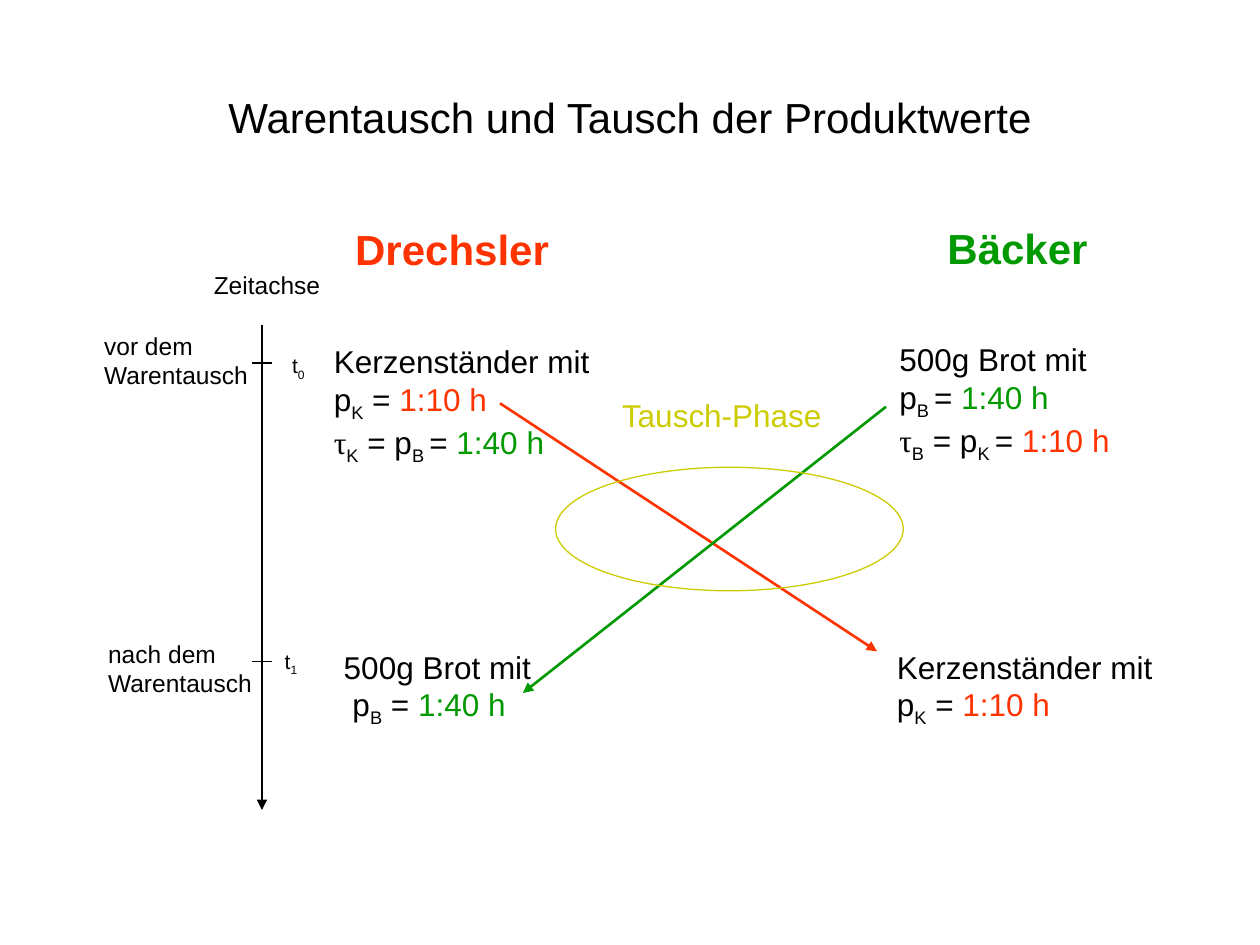
from dataclasses import dataclass

from lxml.etree import SubElement
from pptx import Presentation
from pptx.dml.color import RGBColor
from pptx.enum.shapes import MSO_CONNECTOR, MSO_SHAPE
from pptx.enum.text import MSO_ANCHOR, PP_ALIGN
from pptx.oxml.ns import qn
from pptx.util import Cm, Pt


@dataclass(frozen=True)
class Theme:
    black: RGBColor = RGBColor(0x00, 0x00, 0x00)
    red: RGBColor = RGBColor(0xFF, 0x33, 0x00)
    green: RGBColor = RGBColor(0x00, 0x99, 0x00)
    olive: RGBColor = RGBColor(0xCC, 0xCC, 0x00)
    font: str = "Arial"
    greek: str = "Times New Roman"
    heading: Pt = Pt(24)
    body: Pt = Pt(18)
    label: Pt = Pt(14)
    mark: Pt = Pt(12)
    thick: Pt = Pt(1.5)
    thin: Pt = Pt(0.75)


theme = Theme()


def add_text(s, box, size, lines, color=theme.black, bold=False, wrap=False):
    tf = s.shapes.add_textbox(*map(Cm, box)).text_frame
    tf.word_wrap = wrap
    for i, line in enumerate(lines):
        p = tf.paragraphs[0] if i == 0 else tf.add_paragraph()
        p.font.name, p.font.size, p.font.bold = theme.font, size, bold
        for text, style in [(line, None)] if isinstance(line, str) else line:
            r = p.add_run()
            r.text = text
            r.font.color.rgb = style if isinstance(style, RGBColor) else color
            if style == "sub":
                r._r.get_or_add_rPr().set("baseline", "-25000")
            elif style == "greek":
                r.font.name = theme.greek


def add_line(s, points, color, width, arrow=False):
    line = s.shapes.add_connector(MSO_CONNECTOR.STRAIGHT, *map(Cm, points))
    line.line.color.rgb = color
    line.line.width = width
    if arrow:
        SubElement(line.line._get_or_add_ln(), qn("a:tailEnd"), type="triangle")
    SubElement(line._element.spPr, qn("a:effectLst"))


prs = Presentation()
prs.slide_width, prs.slide_height = Cm(25.4), Cm(19.05)
s = prs.slides.add_slide(prs.slide_layouts[5])

title = s.shapes.title
title.left, title.top, title.width, title.height = map(Cm, (1.27, 0.76, 22.86, 3.18))
tf = title.text_frame
tf.text = "Warentausch und Tausch der Produktwerte"
tf.vertical_anchor = MSO_ANCHOR.MIDDLE
p = tf.paragraphs[0]
p.alignment = PP_ALIGN.CENTER
p.font.name, p.font.size = theme.font, theme.heading
p.font.color.rgb = theme.black

candle_time = ("1:10 h", theme.red)
bread_time = ("1:40 h", theme.green)
candle_value = [("p", None), ("K", "sub"), (" = ", None), candle_time]
bread_value = [("p", None), ("B ", "sub"), ("= ", None), bread_time]
candle_trade = [("τ", "greek"), ("K", "sub"), (" = p", None), ("B ", "sub"), ("= ", None), bread_time]
bread_trade = [("τ", "greek"), ("B", "sub"), (" = p", None), ("K ", "sub"), ("= ", None), candle_time]
bread_received = [(" p", None), ("B", "sub"), (" = ", None), bread_time]

for box, lines, wrap in [
    ((6.48, 6.78, 5.99, 2.57), ["Kerzenständer mit", candle_value, candle_trade], True),
    ((6.68, 12.93, 4.6, 2.54), ["500g Brot mit", bread_received], True),
    ((17.88, 6.73, 6.02, 2.57), ["500g Brot mit", bread_value, bread_trade], True),
    ((17.83, 12.93, 5.66, 1.78), ["Kerzenständer mit", candle_value], False),
]:
    add_text(s, box, theme.body, lines, wrap=wrap)

add_text(s, (6.91, 4.39, 4.47, 1.27), theme.heading, ["Drechsler"], theme.red, bold=True)
add_text(s, (18.85, 4.37, 3.38, 1.27), theme.heading, ["Bäcker"], theme.green, bold=True)

add_text(s, (4.06, 5.31, 2.67, 0.86), theme.label, ["Zeitachse"])
add_line(s, (5.28, 6.55, 5.28, 16.33), theme.black, theme.thick, arrow=True)
for word, index, tick_y, label_at, mark_at in [
    ("vor", "0", 7.32, (1.85, 6.55), (5.64, 6.99)),
    ("nach", "1", 13.34, (1.93, 12.75), (5.49, 12.95)),
]:
    add_text(s, (*label_at, 3.43, 1.45), theme.label, [f"{word} dem", "Warentausch"])
    add_line(s, (5.08, tick_y, 5.49, tick_y), theme.black, theme.thin)
    add_text(s, (*mark_at, 0.79, 0.76), theme.mark, [[("t", None), (index, "sub")]])

add_line(s, (10.08, 8.13, 17.68, 13.13), theme.red, theme.thick, arrow=True)
add_line(s, (17.86, 8.2, 10.54, 13.97), theme.green, theme.thick, arrow=True)

sp = s.shapes.add_shape(MSO_SHAPE.OVAL, *map(Cm, (11.2, 9.42, 7.01, 2.49)))
sp.shadow.inherit = False
sp.fill.background()
sp.line.color.rgb = theme.olive
sp.line.width = theme.thin
add_text(s, (12.29, 7.85, 4.6, 1.02), theme.body, ["Tausch-Phase"], theme.olive)

prs.save("out.pptx")
